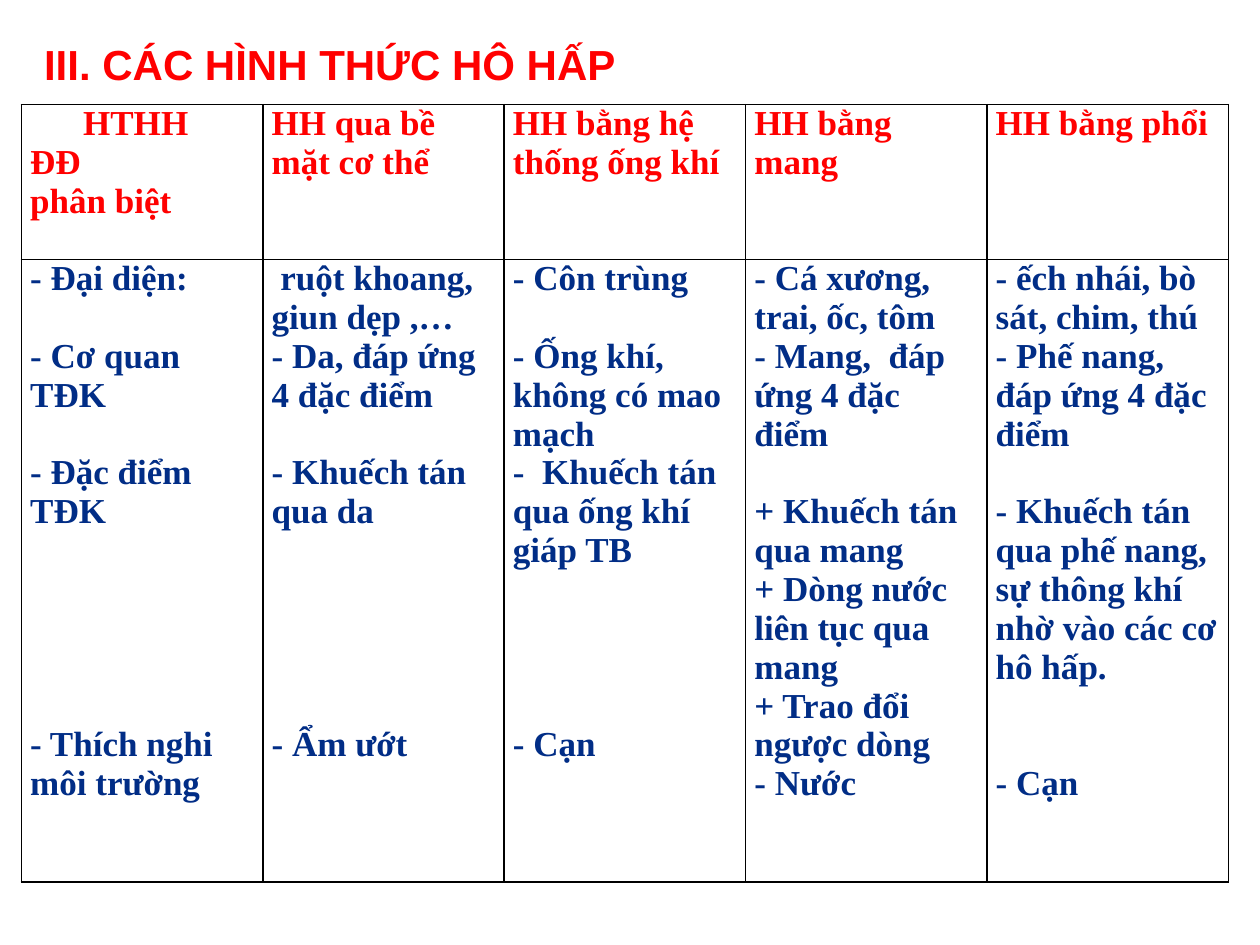
from lxml import etree
from pptx import Presentation
from pptx.dml.color import RGBColor
from pptx.enum.text import MSO_ANCHOR, PP_ALIGN
from pptx.oxml.ns import qn
from pptx.util import Inches, Pt

LEFT = PP_ALIGN.LEFT
TOP = MSO_ANCHOR.TOP
MIDDLE = MSO_ANCHOR.MIDDLE

COLORS = {"heading": "FF0000", "body": "012D86", "border": "000000"}
TITLE_ONLY = 5
LINE_POINTS = 22.14
TABLE_WIDTH = 9.58
ROW_HEIGHTS = [1.23, 4.94]

HEADINGS = [
    ["HTHH", "ĐĐ", "phân biệt"],
    ["HH qua bề mặt cơ thể"],
    ["HH bằng hệ thống ống khí"],
    ["HH bằng mang"],
    ["HH bằng phổi"],
]

# Each entry pairs the number of empty lines above with the wording.
FEATURES = [
    [(0, "- Đại diện:"), (1, "- Cơ quan TĐK"), (1, "- Đặc điểm TĐK"),
     (5, "- Thích nghi môi trường")],
    [(0, " ruột khoang, giun dẹp ,…"), (0, "- Da, đáp ứng 4 đặc điểm"),
     (1, "- Khuếch tán qua da"), (5, "- Ẩm ướt")],
    [(0, "- Côn trùng"), (1, "- Ống khí, không có mao mạch"),
     (0, "-  Khuếch tán qua ống khí giáp TB"), (4, "- Cạn")],
    [(0, "- Cá xương, trai, ốc, tôm"), (0, "- Mang,  đáp ứng 4 đặc điểm"),
     (1, "+ Khuếch tán qua mang"), (0, "+ Dòng nước liên tục qua mang"),
     (0, "+ Trao đổi ngược dòng"), (0, "- Nước")],
    [(0, "- ếch nhái, bò sát, chim, thú"), (0, "- Phế nang, đáp ứng 4 đặc điểm"),
     (1, "- Khuếch tán qua phế nang, sự thông khí nhờ vào các cơ hô hấp."),
     (2, "- Cạn")],
]


def write(paragraph, text, *, size=20, font="Times New Roman",
          color="heading", gap=0, indent=0):
    paragraph.alignment = LEFT
    paragraph.space_before = Pt(gap * LINE_POINTS)
    if indent:
        paragraph._p.get_or_add_pPr().set("indent", str(Inches(indent)))
    run = paragraph.add_run()
    run.text = text
    run.font.size = Pt(size)
    run.font.name = font
    run.font.bold = True
    run.font.color.rgb = RGBColor.from_string(COLORS[color])


def add_title(slide, text):
    title = slide.shapes.title
    title.left, title.top = Inches(0.25), Inches(0.17)
    title.width, title.height = Inches(9), Inches(0.67)
    title.text_frame.vertical_anchor = MIDDLE
    write(title.text_frame.paragraphs[0], text, size=24, font="Arial")


def draw_borders(cell):
    properties = cell._tc.get_or_add_tcPr()
    for side in ("lnL", "lnR", "lnT", "lnB"):
        border = etree.SubElement(properties, qn(f"a:{side}"), w=str(Pt(1)))
        fill = etree.SubElement(border, qn("a:solidFill"))
        etree.SubElement(fill, qn("a:srgbClr"), val=COLORS["border"])


def fill_cell(cell, entries, color, first_indent=0):
    cell.margin_left = cell.margin_right = Inches(0.07)
    cell.margin_top = cell.margin_bottom = 0
    cell.vertical_anchor = TOP
    draw_borders(cell)
    cell.fill.background()
    frame = cell.text_frame
    for index, (gap, text) in enumerate(entries):
        paragraph = frame.add_paragraph() if index else frame.paragraphs[0]
        write(paragraph, text, color=color, gap=gap,
              indent=0 if index else first_indent)


def add_comparison(slide):
    table = slide.shapes.add_table(
        len(ROW_HEIGHTS), len(HEADINGS), Inches(0.17), Inches(0.83),
        Inches(TABLE_WIDTH), Inches(sum(ROW_HEIGHTS))).table
    table.first_row = table.horz_banding = False
    for row, height in zip(table.rows, ROW_HEIGHTS):
        row.height = Inches(height)
    for column, (heading, features) in enumerate(zip(HEADINGS, FEATURES)):
        table.columns[column].width = Inches(TABLE_WIDTH / len(HEADINGS))
        fill_cell(table.cell(0, column), [(0, line) for line in heading],
                  "heading", first_indent=0 if column else 0.42)
        fill_cell(table.cell(1, column), features, "body")


def main():
    presentation = Presentation()
    presentation.slide_width = Inches(10)
    presentation.slide_height = Inches(7.5)
    slide = presentation.slides.add_slide(presentation.slide_layouts[TITLE_ONLY])
    add_comparison(slide)
    add_title(slide, "III. CÁC HÌNH THỨC HÔ HẤP")
    presentation.save("out.pptx")


if __name__ == "__main__":
    main()
